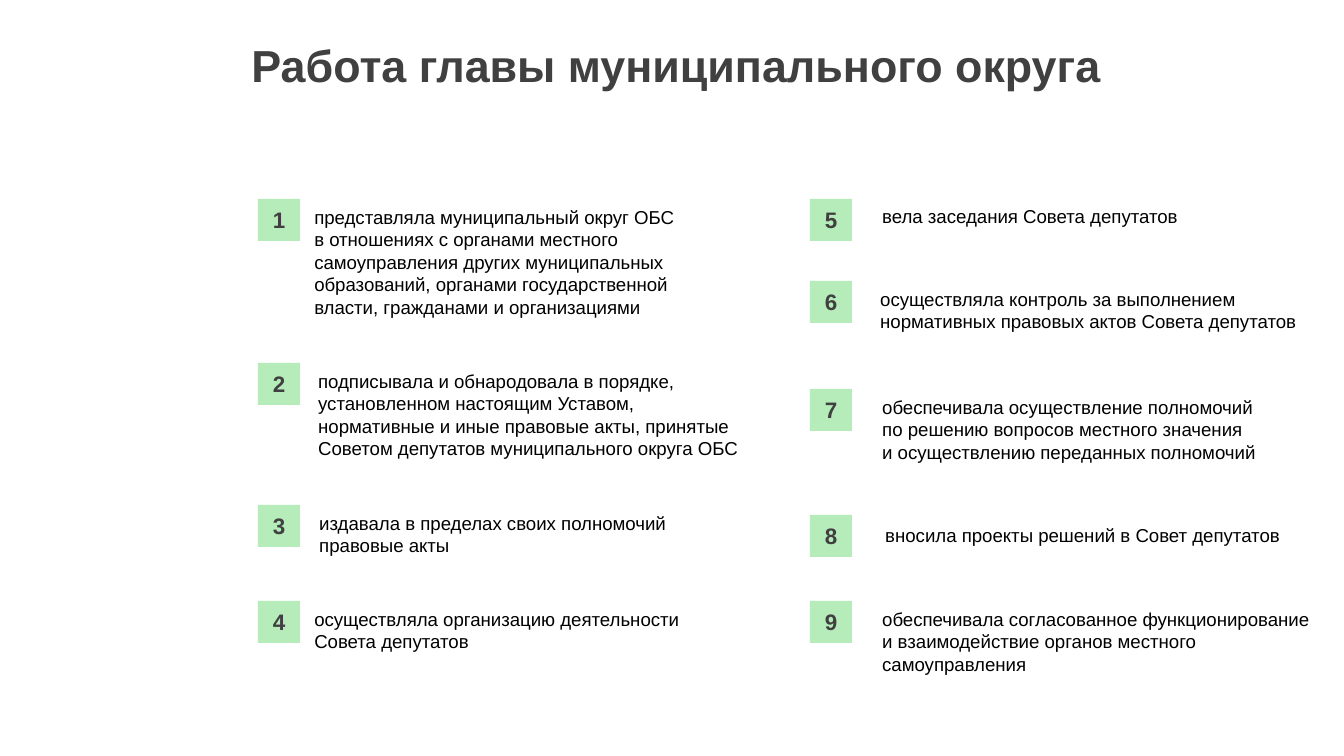
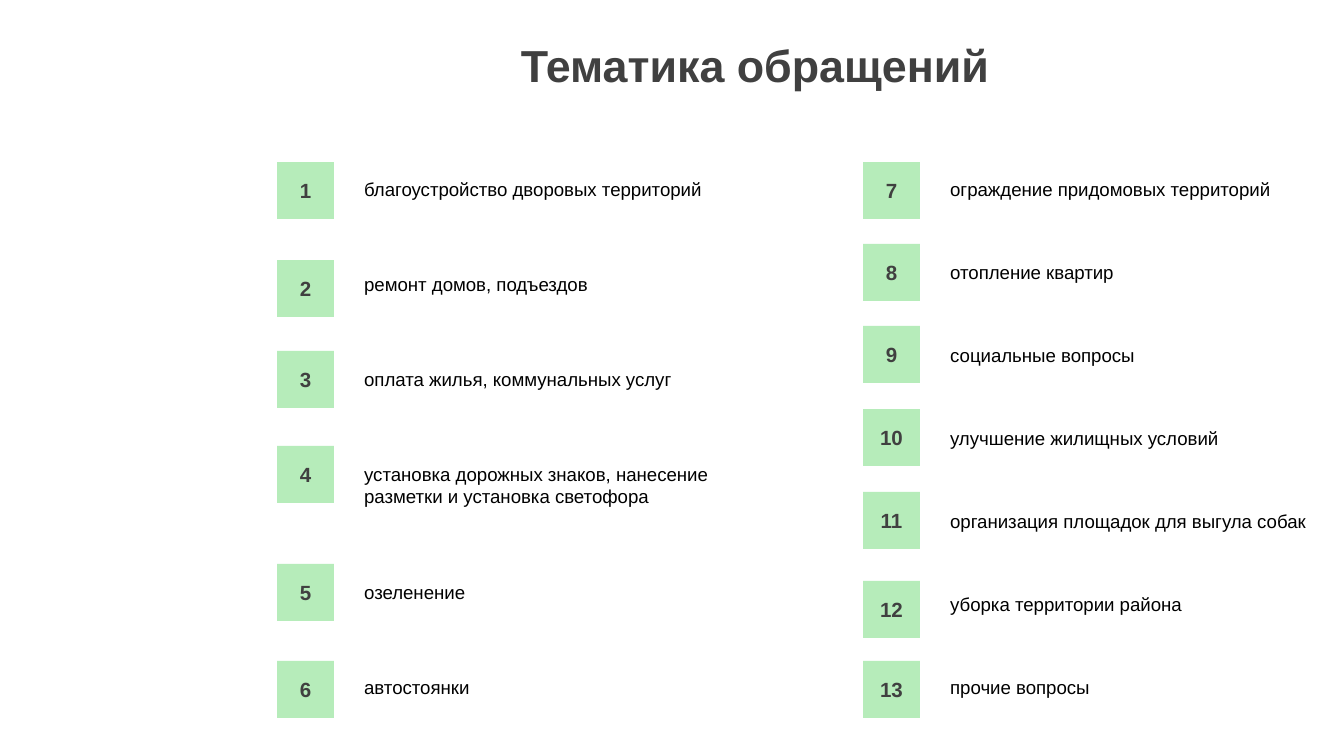
from math import ceil
from typing import NamedTuple

from pptx import Presentation
from pptx.dml.color import RGBColor
from pptx.enum.shapes import MSO_SHAPE
from pptx.enum.text import MSO_ANCHOR, MSO_AUTO_SIZE, PP_ALIGN
from pptx.util import Emu, Pt

EMU_PER_PX = 914400 / 134.4
SLIDE_WIDTH, SLIDE_HEIGHT = 1344, 756
TITLE_HEIGHT = 130
ROW_HEIGHT = 22
TEXT_PADDING = 14
CHARACTERS_PER_ROW = 48
FONT_NAME = "Arial"
DARK_GRAY = RGBColor(0x40, 0x40, 0x40)
BLACK = RGBColor(0x00, 0x00, 0x00)
MINT = RGBColor(0xB6, 0xEC, 0xBA)


class Duty(NamedTuple):
    """A duty of the head of the district and its place on the slide."""

    badge_top: int
    text_left: int
    text_top: int
    lines: list
    text_width: int = 446


class Topic(NamedTuple):
    """A topic of appeals and its vertical place on the slide."""

    badge_top: int
    text_top: int
    lines: list


LEFT_DUTIES = [
    Duty(199, 301, 199, [
        "представляла муниципальный округ ОБС",
        "в отношениях с органами местного",
        "самоуправления других муниципальных",
        "образований, органами государственной",
        "власти, гражданами и организациями",
    ]),
    Duty(363, 305, 363, [
        "подписывала и обнародовала в порядке,",
        "установленном настоящим Уставом,",
        "нормативные и иные правовые акты, принятые Советом депутатов муниципального округа ОБС",
    ], 452),
    Duty(505, 306, 505, ["издавала в пределах своих полномочий", "правовые акты"]),
    Duty(601, 301, 601, ["осуществляла организацию деятельности", "Совета депутатов"]),
]
RIGHT_DUTIES = [
    Duty(199, 869, 198, ["вела заседания Совета депутатов"]),
    Duty(281, 867, 281, [
        "осуществляла контроль за выполнением",
        "нормативных правовых актов Совета депутатов",
    ]),
    Duty(389, 869, 389, [
        "обеспечивала осуществление полномочий",
        "по решению вопросов местного значения",
        "и осуществлению переданных полномочий",
    ]),
    Duty(515, 872, 517, ["вносила проекты решений в Совет депутатов"]),
    Duty(601, 869, 601, [
        "обеспечивала согласованное функционирование и взаимодействие органов местного",
        "самоуправления",
    ], 458),
]
LEFT_TOPICS = [
    Topic(162, 171, ["благоустройство дворовых территорий"]),
    Topic(260, 266, ["ремонт домов, подъездов"]),
    Topic(351, 361, ["оплата жилья, коммунальных услуг"]),
    Topic(446, 456, ["установка дорожных знаков, нанесение", "разметки и установка светофора"]),
    Topic(564, 574, ["озеленение"]),
    Topic(661, 669, ["автостоянки"]),
]
RIGHT_TOPICS = [
    Topic(162, 171, ["ограждение придомовых территорий"]),
    Topic(244, 254, ["отопление квартир"]),
    Topic(326, 337, ["социальные вопросы"]),
    Topic(409, 420, ["улучшение жилищных условий"]),
    Topic(492, 503, ["организация площадок для выгула собак"]),
    Topic(581, 586, ["уборка территории района"]),
    Topic(661, 669, ["прочие вопросы"]),
]


def px(length):
    """Turn a length in px into EMU."""
    return Emu(round(length * EMU_PER_PX))


def set_font(paragraph, size, color, bold=False):
    """Set the font of a whole paragraph."""
    font = paragraph.font
    font.name = FONT_NAME
    font.size = Pt(size)
    font.bold = bold
    font.color.rgb = color


def add_titled_slide(presentation, title, left, width, alignment):
    """Add a title-only slide with its title placed and formatted."""
    slide = presentation.slides.add_slide(presentation.slide_layouts[5])
    shape = slide.shapes.title
    shape.left, shape.top = px(left), px(0)
    shape.width, shape.height = px(width), px(TITLE_HEIGHT)
    frame = shape.text_frame
    frame.text = title
    frame.auto_size = MSO_AUTO_SIZE.NONE
    frame.vertical_anchor = MSO_ANCHOR.MIDDLE
    paragraph = frame.paragraphs[0]
    paragraph.alignment = alignment
    set_font(paragraph, 24, DARK_GRAY, bold=True)
    return slide


def add_badge(slide, number, left, top, side, font_size):
    """Add a green square with a number."""
    shape = slide.shapes.add_shape(MSO_SHAPE.RECTANGLE, px(left), px(top), px(side), px(side))
    shape.shadow.inherit = False
    shape.fill.solid()
    shape.fill.fore_color.rgb = MINT
    shape.line.fill.background()
    frame = shape.text_frame
    frame.text = str(number)
    frame.vertical_anchor = MSO_ANCHOR.MIDDLE
    paragraph = frame.paragraphs[0]
    paragraph.alignment = PP_ALIGN.CENTER
    set_font(paragraph, font_size, DARK_GRAY, bold=True)


def add_description(slide, lines, left, top, width):
    """Add a text box with one paragraph per line."""
    rows = sum(ceil(len(line) / CHARACTERS_PER_ROW) for line in lines)
    height = rows * ROW_HEIGHT + TEXT_PADDING
    frame = slide.shapes.add_textbox(px(left), px(top), px(width), px(height)).text_frame
    frame.word_wrap = True
    frame.auto_size = MSO_AUTO_SIZE.SHAPE_TO_FIT_TEXT
    frame.text = "\n".join(lines)
    for paragraph in frame.paragraphs:
        set_font(paragraph, 10, BLACK)


def add_duties(slide, duties, first_number, badge_left):
    """Add a column of numbered duties."""
    for number, duty in enumerate(duties, first_number):
        add_badge(slide, number, badge_left, duty.badge_top, 42, 12)
        add_description(slide, duty.lines, duty.text_left, duty.text_top, duty.text_width)


def add_topics(slide, topics, first_number, badge_left):
    """Add a column of numbered topics."""
    for number, topic in enumerate(topics, first_number):
        add_badge(slide, number, badge_left, topic.badge_top, 57, 11)
        add_description(slide, topic.lines, badge_left + 74, topic.text_top, 450)


def main():
    """Build and save the presentation."""
    presentation = Presentation()
    presentation.slide_width = px(SLIDE_WIDTH)
    presentation.slide_height = px(SLIDE_HEIGHT)

    slide = add_titled_slide(
        presentation, "Работа главы муниципального округа", 238, 1106, PP_ALIGN.LEFT)
    add_duties(slide, LEFT_DUTIES, 1, 258)
    add_duties(slide, RIGHT_DUTIES, len(LEFT_DUTIES) + 1, 810)

    slide = add_titled_slide(presentation, "Тематика обращений", 277, 956, PP_ALIGN.CENTER)
    add_topics(slide, LEFT_TOPICS, 1, 277)
    add_topics(slide, RIGHT_TOPICS, len(LEFT_TOPICS) + 1, 863)

    presentation.save("out.pptx")


if __name__ == "__main__":
    main()
